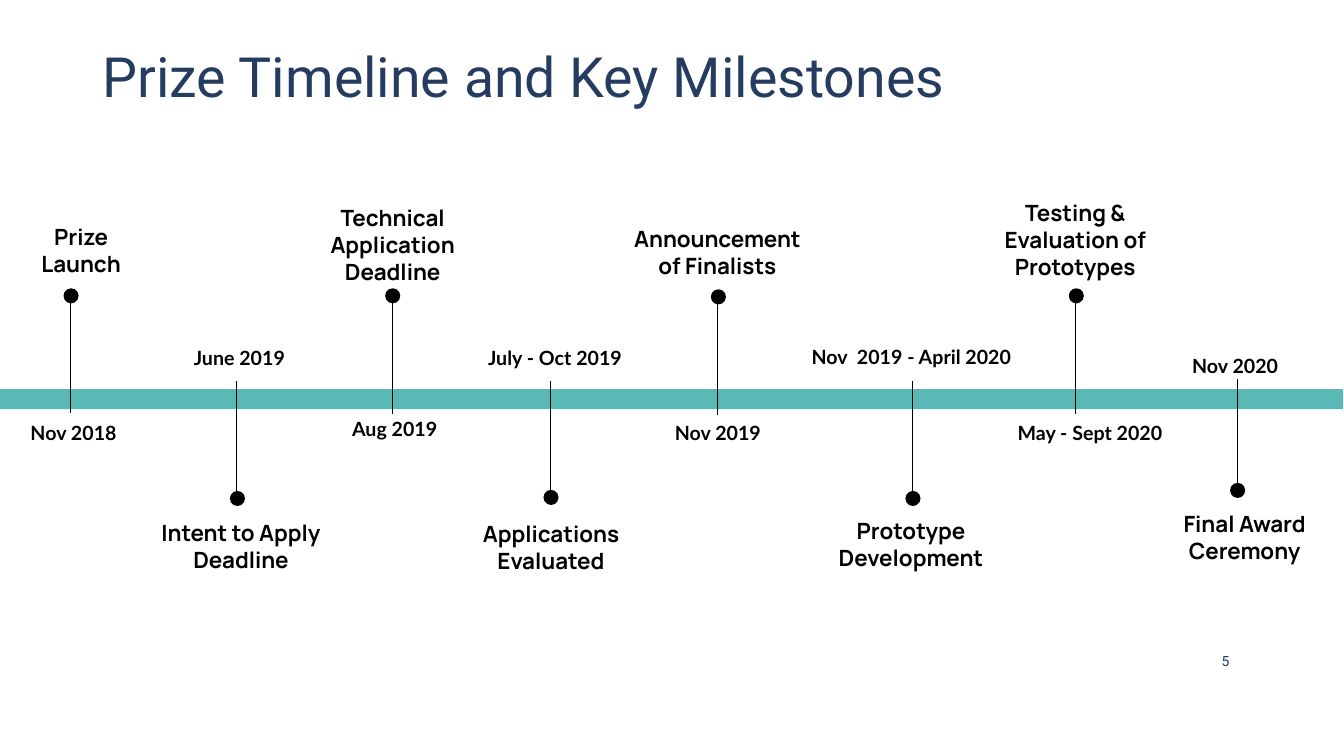
import pptx
import pptx.util
import pptx.dml.color
import pptx.enum.shapes
import pptx.enum.text
import pptx.oxml.ns
import lxml.etree

Inches = pptx.util.Inches
Pt = pptx.util.Pt
MSO_SHAPE = pptx.enum.shapes.MSO_SHAPE
PP_ALIGN = pptx.enum.text.PP_ALIGN
MSO_ANCHOR = pptx.enum.text.MSO_ANCHOR

prs = pptx.Presentation()
prs.slide_width = Inches(13.33)
prs.slide_height = Inches(7.5)
s = prs.slides.add_slide(prs.slide_layouts[6])


def add_text(text, box, font, size, color="000000", bold=False, align=PP_ALIGN.CENTER,
             anchor=MSO_ANCHOR.TOP, inset=0.1, spacing=1.0, after=0):
    tf = s.shapes.add_textbox(*[Inches(v) for v in box]).text_frame
    tf.word_wrap = True
    tf.vertical_anchor = anchor
    tf.margin_left = tf.margin_right = Inches(0.1)
    tf.margin_top = tf.margin_bottom = Inches(inset)
    tf.text = text
    p = tf.paragraphs[0]
    p.alignment = align
    p.line_spacing = spacing
    p.space_after = Pt(after)
    r = p.runs[0]
    r.font.name = font
    r.font.size = Pt(size)
    r.font.bold = bold
    r.font.color.rgb = pptx.dml.color.RGBColor.from_string(color)


def add_solid(kind, box, color):
    sp = s.shapes.add_shape(kind, *[Inches(v) for v in box])
    sp.shadow.inherit = False
    sp.fill.solid()
    sp.fill.fore_color.rgb = pptx.dml.color.RGBColor.from_string(color)
    sp.line.fill.background()


add_solid(MSO_SHAPE.RECTANGLE, (-0.01, 3.86, 13.33, 0.2), "59B9B4")
add_text("Prize Timeline and Key Milestones", (0.92, 0.42, 11.5, 0.74), "Roboto", 39.6,
         "253C60", align=PP_ALIGN.LEFT, anchor=MSO_ANCHOR.MIDDLE, inset=0.05, spacing=0.9)

DATE_HEIGHT = 0.54
STEM = 1.1
DOT = 0.15

milestones = [
    ("Prize Launch", (0.07, 2.11, 1.47, 0.38), "Nov 2018", (-0.15, 4.04, 1.76), 0.7, 3.0, 2.86),
    ("Intent to Apply Deadline", (1.22, 5.05, 2.34, 0.54), "June 2019", (1.56, 3.3, 1.63), 2.35, 3.78, 4.87),
    ("Technical Application Deadline", (2.83, 1.93, 2.13, 0.85), "Aug 2019", (2.98, 4.0, 1.87), 3.89, 3.01, 2.86),
    ("Applications Evaluated", (4.52, 5.06, 1.89, 0.79), "July - Oct 2019", (4.44, 3.3, 2.13), 5.46, 3.78, 4.86),
    ("Announcement of Finalists", (6.09, 2.13, 2.05, 0.52), "Nov 2019", (6.0, 4.04, 2.24), 7.12, 3.02, 2.87),
    ("Prototype Development", (8.09, 5.03, 1.89, 0.81), "Nov  2019 - April 2020", (7.75, 3.29, 2.58), 9.05, 3.78, 4.87),
    ("Testing & Evaluation of Prototypes", (9.6, 1.88, 2.13, 0.92), "May - Sept 2020", (9.69, 4.04, 2.24), 10.67, 3.01, 2.86),
    ("Final Award Ceremony", (11.48, 4.96, 1.73, 0.74), "Nov 2020", (11.13, 3.38, 2.24), 12.27, 3.76, 4.79),
]

for label, label_box, date, date_box, x, stem_top, dot_top in milestones:
    add_text(label, label_box, "Manrope", 16, bold=True, after=16)
    add_text(date, (*date_box, DATE_HEIGHT), "Lato", 14, bold=True, spacing=1.15, after=16)
    stem = s.shapes.add_connector(pptx.enum.shapes.MSO_CONNECTOR.STRAIGHT, Inches(x),
                                  Inches(stem_top), Inches(x), Inches(stem_top + STEM))
    stem.line.width = Pt(0.75)
    stem.line.color.rgb = pptx.dml.color.RGBColor.from_string("000000")
    lxml.etree.SubElement(stem._element.spPr, pptx.oxml.ns.qn("a:effectLst"))
    add_solid(MSO_SHAPE.OVAL, (x - 0.07, dot_top, DOT, DOT), "000000")

add_text("5", (11.9, 6.36, 0.51, 0.4), "Roboto", 10, "1F3B63",
         anchor=MSO_ANCHOR.MIDDLE, inset=0.05)

prs.save("out.pptx")
